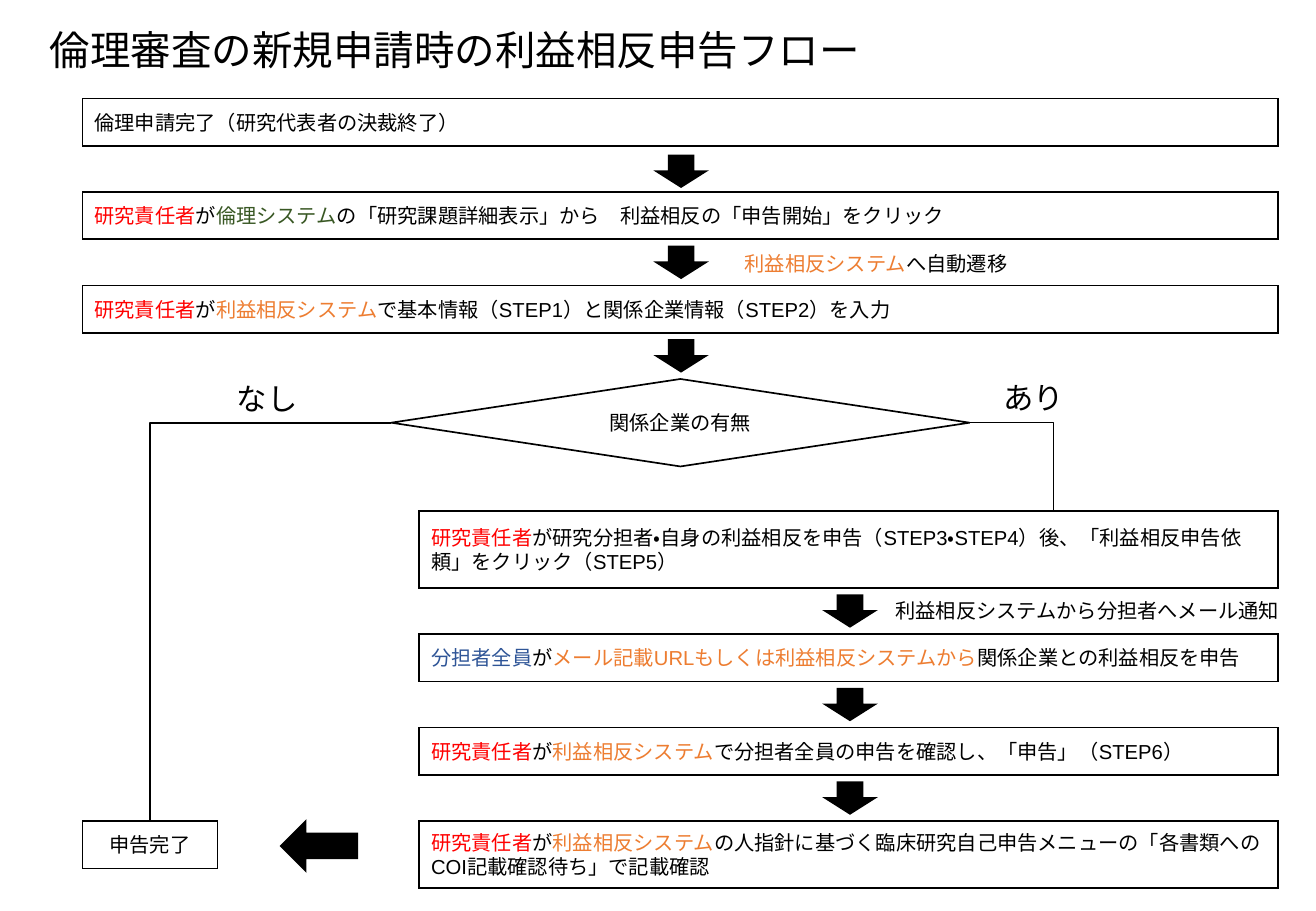
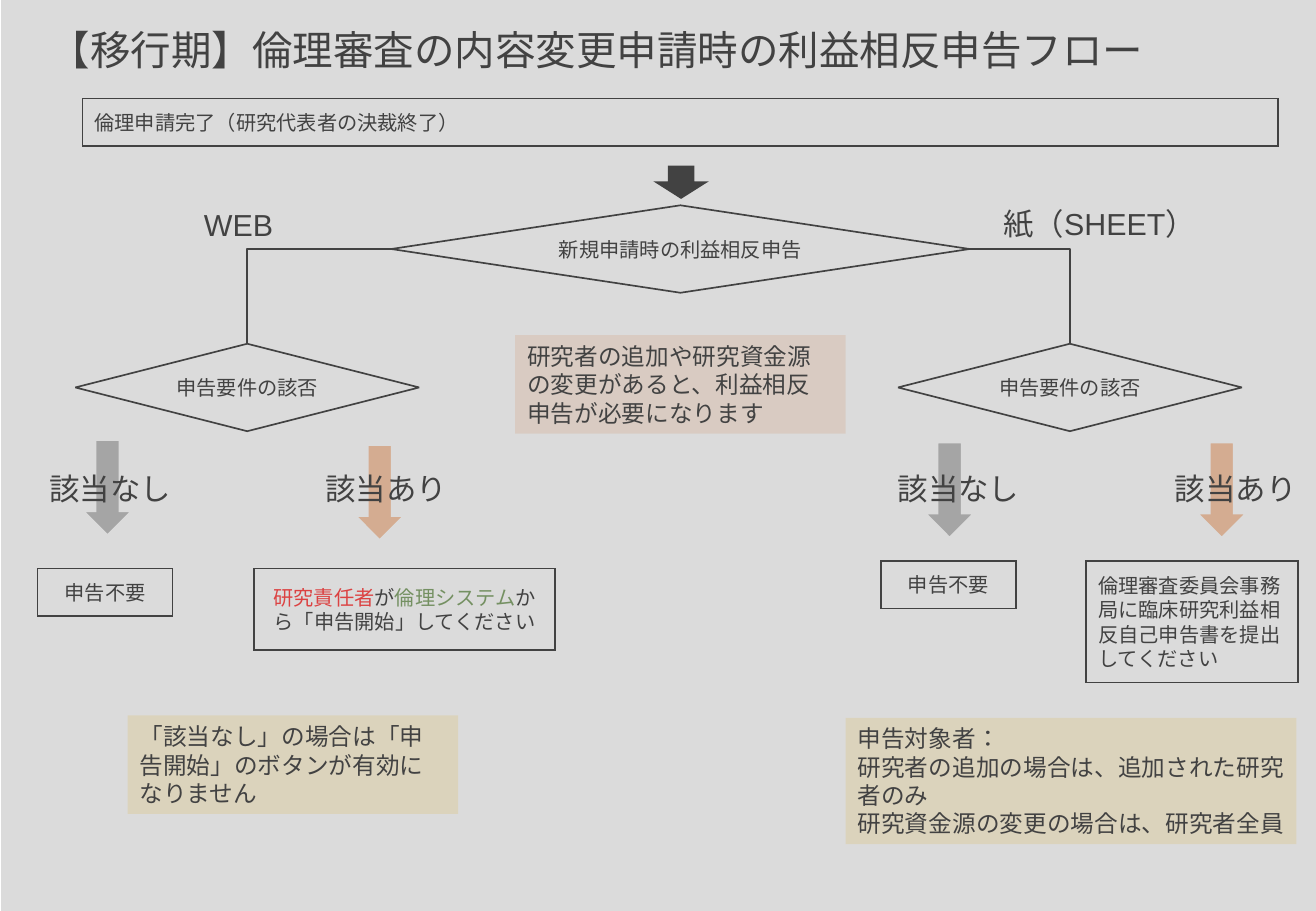
"""Build two slides showing the conflict-of-interest declaration flows."""
from dataclasses import dataclass
from typing import Optional, Sequence

from lxml.etree import SubElement
from pptx import Presentation
from pptx.dml.color import RGBColor
from pptx.enum.lang import MSO_LANGUAGE_ID as Language
from pptx.enum.shapes import MSO_CONNECTOR as ConnectorKind, MSO_SHAPE as ShapeKind
from pptx.enum.text import MSO_ANCHOR as Anchor, MSO_AUTO_SIZE as AutoSize, PP_ALIGN as Align
from pptx.oxml.ns import qn
from pptx.presentation import Presentation as Deck
from pptx.shapes.autoshape import Shape
from pptx.slide import Slide
from pptx.text.text import TextFrame
from pptx.util import Inches, Pt

BLACK = RGBColor(0x00, 0x00, 0x00)
WHITE = RGBColor(0xFF, 0xFF, 0xFF)
RED = RGBColor(0xFF, 0x00, 0x00)
ORANGE = RGBColor(0xED, 0x7D, 0x31)
BLUE = RGBColor(0x2F, 0x55, 0x97)
DARK_GREEN = RGBColor(0x38, 0x57, 0x23)
GREEN = RGBColor(0x54, 0x82, 0x35)
GRAY = RGBColor(0xA5, 0xA5, 0xA5)
PEACH = RGBColor(0xF4, 0xB1, 0x83)
PALE_PEACH = RGBColor(0xFB, 0xE5, 0xD6)
PALE_YELLOW = RGBColor(0xFF, 0xF2, 0xCC)
VEIL_GRAY = RGBColor(0xA6, 0xA6, 0xA6)
ARIAL, CALIBRI = "Arial", "Calibri"
PAGE_WIDTH, PAGE_HEIGHT = 10.83, 7.5
BAR_LEFT, BAR_WIDTH, BAR_HEIGHT = 0.68, 9.84, 0.39
BRANCH_LEFT, BRANCH_WIDTH = 3.45, 7.07
ARROW_WIDTH, ARROW_HEIGHT = 0.41, 0.26
MAIN_ARROW, BRANCH_ARROW = 5.4, 6.79
DECISION_LEFT, DECISION_WIDTH, DECISION_HEIGHT = 3.22, 4.76, 0.72
TOP, LEFT, RIGHT = 0, 1, 3


@dataclass(frozen=True)
class Area:
    """Position and size in inches."""
    left: float
    top: float
    width: float
    height: float


@dataclass(frozen=True)
class Span:
    """A piece of text in one colour and font."""
    text: str
    color: RGBColor = BLACK
    font: str = ARIAL


@dataclass(frozen=True)
class Step:
    """A framed box of the flow."""
    area: Area
    spans: Sequence[Span]
    align: Align = Align.LEFT


@dataclass(frozen=True)
class Label:
    """Free text beside the flow."""
    area: Area
    spans: Sequence[Span]
    size: int = 18
    wrap: bool = True


@dataclass(frozen=True)
class Note:
    """A tinted remark, one string a paragraph."""
    area: Area
    fill: RGBColor
    lines: Sequence[str]


LEADER = Span("研究責任者", RED)
GA = Span("が")
COI_SYSTEM = Span("利益相反システム", ORANGE, CALIBRI)
START = Step(Area(BAR_LEFT, 0.81, BAR_WIDTH, BAR_HEIGHT), [Span("倫理申請完了（研究代表者の決裁終了）")])


def write(frame: TextFrame, lines: Sequence[Sequence[Span]], size: int, align: Align = Align.LEFT) -> None:
    """Write paragraphs of spans into a frame."""
    for index, spans in enumerate(lines):
        para = frame.add_paragraph() if index else frame.paragraphs[0]
        para.alignment = align
        for span in spans:
            run = para.add_run()
            run.text = span.text
            run.font.size = Pt(size)
            run.font.name = span.font
            run.font.color.rgb = span.color
            run.font.language_id = Language.JAPANESE


def add_page(deck: Deck, title: str, width: float) -> Slide:
    """Add a title-only slide and format its title."""
    page = deck.slides.add_slide(deck.slide_layouts[5])
    holder = page.shapes.title
    holder.left, holder.top = Inches(0.31), Inches(0.16)
    holder.width, holder.height = Inches(width), Inches(0.5)
    frame = holder.text_frame
    frame.word_wrap = True
    frame.auto_size = AutoSize.NONE
    frame.vertical_anchor = Anchor.TOP
    write(frame, [[Span(title)]], 24)
    return page


def add_figure(page: Slide, kind: ShapeKind, area: Area, fill: RGBColor,
               line: Optional[RGBColor] = BLACK, weight: float = 1) -> Shape:
    """Add a flat preset shape with sharp corners."""
    figure = page.shapes.add_shape(kind, Inches(area.left), Inches(area.top),
                                   Inches(area.width), Inches(area.height))
    figure.shadow.inherit = False
    figure.fill.solid()
    figure.fill.fore_color.rgb = fill
    if line is None:
        figure.line.fill.background()
    else:
        figure.line.color.rgb = line
        figure.line.width = Pt(weight)
        SubElement(figure.element.spPr.find(qn("a:ln")), qn("a:miter")).set("lim", "800000")
    return figure


def add_step(page: Slide, step: Step, kind: ShapeKind = ShapeKind.RECTANGLE) -> Shape:
    """Add a white framed box with text."""
    box = add_figure(page, kind, step.area, WHITE)
    box.text_frame.word_wrap = True
    box.text_frame.vertical_anchor = Anchor.MIDDLE
    write(box.text_frame, [step.spans], 12, step.align)
    return box


def add_decision(page: Slide, area: Area, text: str) -> Shape:
    """Add a decision diamond."""
    step = Step(area, [Span(text, font=CALIBRI)], Align.CENTER)
    return add_step(page, step, ShapeKind.FLOWCHART_DECISION)


def add_main_decision(page: Slide, top: float, text: str) -> Shape:
    """Add the wide central decision."""
    return add_decision(page, Area(DECISION_LEFT, top, DECISION_WIDTH, DECISION_HEIGHT), text)


def add_arrow(page: Slide, left: float, top: float) -> None:
    """Add a small black down arrow."""
    add_figure(page, ShapeKind.DOWN_ARROW, Area(left, top, ARROW_WIDTH, ARROW_HEIGHT), BLACK)


def add_label(page: Slide, label: Label) -> None:
    """Add a text box."""
    area = label.area
    box = page.shapes.add_textbox(Inches(area.left), Inches(area.top),
                                  Inches(area.width), Inches(area.height))
    box.text_frame.word_wrap = label.wrap
    box.text_frame.auto_size = AutoSize.SHAPE_TO_FIT_TEXT
    write(box.text_frame, [label.spans], label.size)


def add_note(page: Slide, note: Note) -> None:
    """Add a tinted note without outline."""
    box = add_figure(page, ShapeKind.RECTANGLE, note.area, note.fill, None)
    box.text_frame.word_wrap = True
    box.text_frame.auto_size = AutoSize.SHAPE_TO_FIT_TEXT
    box.text_frame.vertical_anchor = Anchor.MIDDLE
    write(box.text_frame, [[Span(line)] for line in note.lines], 14)


def add_elbow(page: Slide, decision: Shape, side: int, end_x: float, end_y: float,
              target: Optional[Shape] = None) -> None:
    """Run a one-bend line from a side of a decision down to a point or box top."""
    start_x = decision.left + (decision.width if side == RIGHT else 0)
    start_y = decision.top + decision.height // 2
    elbow = page.shapes.add_connector(ConnectorKind.ELBOW, start_x, start_y, Inches(end_x), Inches(end_y))
    elbow.begin_connect(decision, side)
    if target is not None:
        elbow.end_connect(target, TOP)
    elbow.line.color.rgb = BLACK
    elbow.line.width = Pt(1)
    properties = elbow.element.spPr
    properties.find(qn("a:prstGeom")).set("prst", "bentConnector2")
    SubElement(properties, qn("a:effectLst"))


def add_veil(page: Slide) -> None:
    """Cover the page with a translucent gray sheet."""
    veil = add_figure(page, ShapeKind.RECTANGLE, Area(0.01, 0, PAGE_WIDTH, PAGE_HEIGHT), VEIL_GRAY, None)
    color = veil.element.spPr.find(qn("a:solidFill")).find(qn("a:srgbClr"))
    SubElement(color, qn("a:alpha")).set("val", "40000")


def build_new_application(deck: Deck) -> None:
    """Build the flow for a new application."""
    page = add_page(deck, "倫理審査の新規申請時の利益相反申告フロー", 6.97)
    steps = [
        START,
        Step(Area(BAR_LEFT, 1.58, BAR_WIDTH, BAR_HEIGHT), [
            LEADER, GA, Span("倫理システム", DARK_GREEN),
            Span("の「研究課題詳細表示」から　利益相反の「申告開始」をクリック")]),
        Step(Area(BAR_LEFT, 2.35, BAR_WIDTH, BAR_HEIGHT), [
            LEADER, GA, COI_SYSTEM, Span("で", font=CALIBRI),
            Span("基本情報（STEP1）と関係企業情報（STEP2）を入力")]),
        Step(Area(BRANCH_LEFT, 4.21, BRANCH_WIDTH, 0.63), [
            LEADER, Span("が研究分担者・自身の利益相反を申告（STEP3・STEP4）後、"
                         "「利益相反申告依頼」をクリック（STEP5）")]),
        Step(Area(BRANCH_LEFT, 5.22, BRANCH_WIDTH, BAR_HEIGHT), [
            Span("分担者全員", BLUE), GA,
            Span("メール記載URLもしくは利益相反システムから", ORANGE),
            Span("関係企業との利益相反を申告")]),
        Step(Area(BRANCH_LEFT, 5.99, BRANCH_WIDTH, BAR_HEIGHT), [
            LEADER, GA, COI_SYSTEM, Span("で", font=CALIBRI),
            Span("分担者全員の申告を確認し、「申告」（STEP6）")]),
        Step(Area(BRANCH_LEFT, 6.76, BRANCH_WIDTH, 0.55), [
            LEADER, GA, COI_SYSTEM, Span("の", font=CALIBRI),
            Span("人指針に基づく臨床研究自己申告メニューの「各書類へのCOI記載確認待ち」で記載確認")]),
    ]
    for step in steps:
        add_step(page, step)
    finish = add_step(page, Step(Area(BAR_LEFT, 6.76, 1.11, BAR_HEIGHT), [Span("申告完了")], Align.CENTER))
    decision = add_main_decision(page, 3.12, "関係企業の有無")
    for top in (1.28, 2.03, 2.8):
        add_arrow(page, MAIN_ARROW, top)
    for top in (4.9, 5.67, 6.44):
        add_arrow(page, BRANCH_ARROW, top)
    back_arrow = add_figure(page, ShapeKind.DOWN_ARROW, Area(2.42, 6.65, ARROW_WIDTH, 0.63), BLACK)
    back_arrow.rotation = 90
    add_elbow(page, decision, LEFT, 1.24, 6.76, finish)
    add_elbow(page, decision, RIGHT, 8.67, 4.21)
    for label in (
        Label(Area(1.85, 3.08, 0.75, 0.4), [Span("なし", font=CALIBRI)]),
        Label(Area(8.16, 3.07, 0.75, 0.4), [Span("あり", font=CALIBRI)]),
        Label(Area(6.03, 2.02, 4.31, 0.3), [COI_SYSTEM, Span("へ自動遷移", font=CALIBRI)], 12),
        Label(Area(7.27, 4.88, 3.4, 0.3), [Span("利益相反システムから分担者へメール通知")], 12, False),
    ):
        add_label(page, label)


def build_change_application(deck: Deck) -> None:
    """Build the flow for a change during the transition period."""
    page = add_page(deck, "【移行期】倫理審査の内容変更申請時の利益相反申告フロー", 10.22)
    for left, top, fill in ((0.68, 3.62, GRAY), (2.92, 3.66, PEACH), (7.61, 3.64, GRAY), (9.85, 3.64, PEACH)):
        add_figure(page, ShapeKind.DOWN_ARROW, Area(left, top, ARROW_WIDTH, 0.79), fill, WHITE, 1.5)
    add_step(page, START)
    decision = add_main_decision(page, 1.69, "新規申請時の利益相反申告")
    add_arrow(page, MAIN_ARROW, 1.37)
    for side, left in ((LEFT, 0.62), (RIGHT, 7.39)):
        check = add_decision(page, Area(left, 2.83, 2.83, DECISION_HEIGHT), "申告要件の該否")
        add_elbow(page, decision, side, left + 1.42, 2.83, check)
    add_label(page, Label(Area(1.58, 1.65, 1.02, 0.4), [Span("WEB")]))
    add_label(page, Label(Area(8.16, 1.64, 2.06, 0.4), [Span("紙（SHEET）")]))
    for left, text in ((0.31, "該当なし"), (2.58, "該当あり"), (7.29, "該当なし"), (9.57, "該当あり")):
        add_label(page, Label(Area(left, 3.82, 1.28, 0.4), [Span(text)]))
    for left, top in ((0.31, 4.68), (7.25, 4.62)):
        add_step(page, Step(Area(left, top, 1.11, BAR_HEIGHT), [Span("申告不要")], Align.CENTER))
    add_step(page, Step(Area(8.94, 4.62, 1.74, 1), [
        Span("倫理審査委員会事務局に臨床研究利益相反自己申告書を提出してください")]))
    add_step(page, Step(Area(2.09, 4.68, 2.48, 0.67), [
        LEADER, GA, Span("倫理システム", GREEN), Span("から「申告開始」してください")], Align.CENTER))
    for note in (
        Note(Area(4.24, 2.76, 2.72, 0.81), PALE_PEACH,
             ["研究者の追加や研究資金源の変更があると、利益相反申告が必要になります"]),
        Note(Area(1.05, 5.89, 2.72, 0.81), PALE_YELLOW,
             ["「該当なし」の場合は「申告開始」のボタンが有効になりません"]),
        Note(Area(6.96, 5.91, 3.71, 1.04), PALE_YELLOW,
             ["申告対象者：", "研究者の追加の場合は、追加された研究者のみ", "研究資金源の変更の場合は、研究者全員"]),
    ):
        add_note(page, note)
    add_veil(page)


def main() -> None:
    """Build and save the deck."""
    deck = Presentation()
    deck.slide_width, deck.slide_height = Inches(PAGE_WIDTH), Inches(PAGE_HEIGHT)
    build_new_application(deck)
    build_change_application(deck)
    deck.save("out.pptx")


if __name__ == "__main__":
    main()
